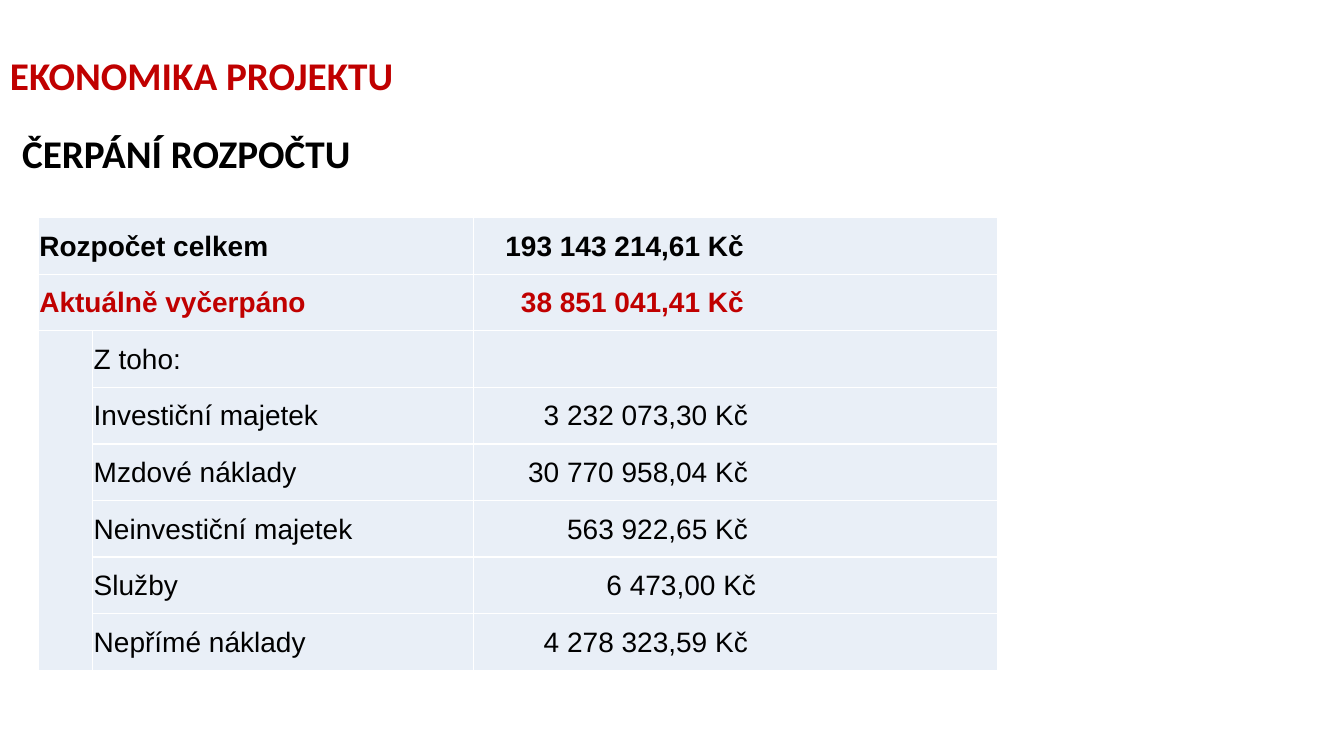
from lxml import etree
from pptx import Presentation
from pptx.dml.color import RGBColor
from pptx.enum.text import MSO_ANCHOR, PP_ALIGN
from pptx.oxml.ns import qn
from pptx.util import Inches, Pt

MIDDLE, TOP = MSO_ANCHOR.MIDDLE, MSO_ANCHOR.TOP
LEFT, RIGHT = PP_ALIGN.LEFT, PP_ALIGN.RIGHT
COLORS = {"red": "C00000", "black": "000000", "cell": "E9EFF7", "border": "FFFFFF"}


def write(para, text, font, size, color, bold):
    span = para.add_run()
    span.text = text
    span.font.name = font
    span.font.size = Pt(size)
    span.font.bold = bold
    span.font.color.rgb = RGBColor.from_string(COLORS[color])


def style_cell(cell):
    """Fill the cell and draw a 1 pt border on all four sides."""
    properties = cell._tc.get_or_add_tcPr()
    for side in ("a:lnL", "a:lnR", "a:lnT", "a:lnB"):
        line = etree.SubElement(properties, qn(side), w=str(Pt(1)))
        fill = etree.SubElement(line, qn("a:solidFill"))
        etree.SubElement(fill, qn("a:srgbClr"), val=COLORS["border"])
    cell.fill.solid()
    cell.fill.fore_color.rgb = RGBColor.from_string(COLORS["cell"])


deck = Presentation()
deck.slide_width, deck.slide_height = Inches(13.33), Inches(7.5)
page = deck.slides.add_slide(deck.slide_layouts[6])

# Headings: text, top, width, height, left inset, anchor, color
headings = [
    ("EKONOMIKA PROJEKTU", 0.4, 8.59, 0.75, 0.1, MIDDLE, "red"),
    ("ČERPÁNÍ ROZPOČTU", 1.29, 13.33, 5.55, 0.22, TOP, "black"),
]
for text, top, width, height, inset, anchor, color in headings:
    box = page.shapes.add_textbox(0, Inches(top), Inches(width), Inches(height))
    frame = box.text_frame
    frame.word_wrap = True
    frame.vertical_anchor = anchor
    frame.margin_left = Inches(inset)
    para = frame.paragraphs[0]
    para.line_spacing = 0.9
    write(para, text, "Calibri", 28, color, True)

# Budget rows: label, amount, right inset of the amount, color, bold
budget = [
    ("Rozpočet celkem", "193 143 214,61 Kč", 2.51, "black", True),
    ("Aktuálně vyčerpáno", "38 851 041,41 Kč", 2.51, "red", True),
    ("Z toho:", "", 2.47, "black", False),
    ("Investiční majetek", "3 232 073,30 Kč", 2.47, "black", False),
    ("Mzdové náklady", "30 770 958,04 Kč", 2.47, "black", False),
    ("Neinvestiční majetek", "563 922,65 Kč", 2.47, "black", False),
    ("Služby", "6 473,00 Kč", 2.39, "black", False),
    ("Nepřímé náklady", "4 278 323,59 Kč", 2.47, "black", False),
]
table = page.shapes.add_table(
    len(budget), 3, Inches(0.38), Inches(2.16), Inches(9.52), Inches(4.49)
).table
table.first_row = table.horz_banding = False
for column, width in zip(table.columns, (0.54, 3.78, 5.19)):
    column.width = Inches(width)
for cell in table.iter_cells():
    style_cell(cell)

for row, (label, amount, inset, color, bold) in enumerate(budget):
    if bold:
        table.cell(row, 0).merge(table.cell(row, 1))
    entries = [
        (0 if bold else 1, label, LEFT, 0.01),
        (2, amount, RIGHT, inset),
    ]
    for column, text, align, right_inset in entries:
        if not text:
            continue
        cell = table.cell(row, column)
        cell.vertical_anchor = MIDDLE
        cell.margin_left = cell.margin_top = Inches(0.01)
        cell.margin_right = Inches(right_inset)
        cell.margin_bottom = 0
        para = cell.text_frame.paragraphs[0]
        para.alignment = align
        write(para, text, "Arial", 20, color, bold)
table.cell(2, 0).merge(table.cell(len(budget) - 1, 0))

deck.save("out.pptx")
